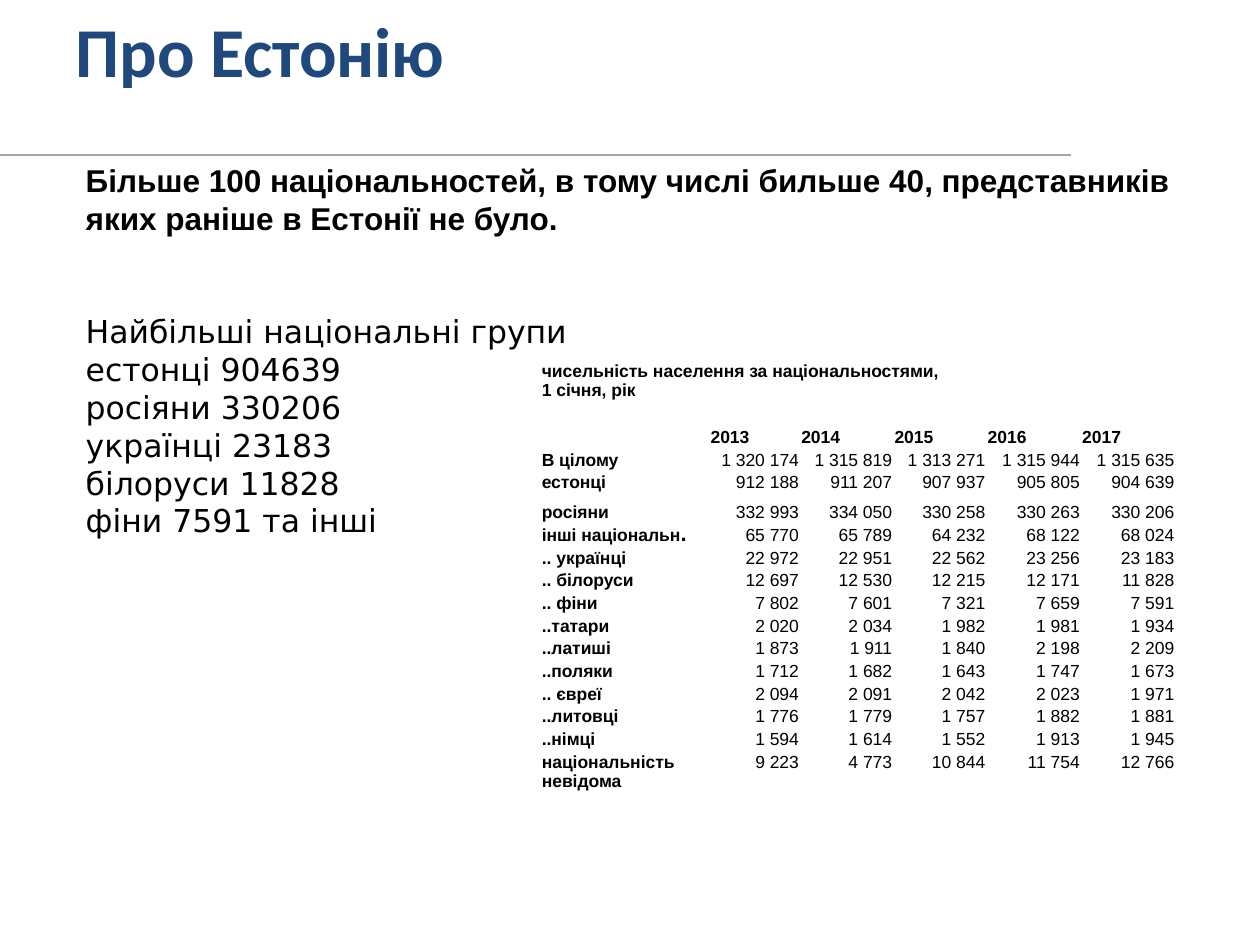
import pptx
import pptx.dml.color
import pptx.enum.shapes
import pptx.enum.text
import pptx.oxml.ns
import pptx.util
from lxml import etree

Inches, Pt = pptx.util.Inches, pptx.util.Pt
ALIGN = pptx.enum.text.PP_ALIGN
TOP = pptx.enum.text.MSO_ANCHOR.TOP
qn = pptx.oxml.ns.qn

THEME = {
    "title": "1F497D", "text": "000000", "rule": "A6A6A6",
    "title_font": "Calibri", "font": "Arial", "list_font": "DejaVu Sans",
    "title_size": 40, "body_size": 18, "table_size": 10,
}


def write(p, text, size, font=THEME["font"], color=THEME["text"], bold=False,
          align=ALIGN.LEFT, line=None, before=0):
    """Append a formatted run to a paragraph."""
    p.alignment = align
    p.space_before = Pt(before)
    if line:
        p.line_spacing = Pt(line)
    r = p.add_run()
    r.text = text
    r.font.size = Pt(size)
    r.font.name = font
    r.font.bold = bold
    r.font.color.rgb = pptx.dml.color.RGBColor.from_string(color)


prs = pptx.Presentation()
prs.slide_width, prs.slide_height = Inches(10), Inches(7.5)
s = prs.slides.add_slide(prs.slide_layouts[1])

# Rule under the title
rule = s.shapes.add_connector(pptx.enum.shapes.MSO_CONNECTOR.STRAIGHT,
                              Inches(-0.2), Inches(1.23), Inches(8.5), Inches(1.23))
rule.line.color.rgb = pptx.dml.color.RGBColor.from_string(THEME["rule"])
rule.line.width = Pt(1)
etree.SubElement(rule._element.spPr, qn("a:effectLst"))

# Title
title = s.shapes.title
title.left, title.top = Inches(0.5), Inches(0.3)
title.width, title.height = Inches(6.67), Inches(1.09)
tf = title.text_frame
tf.auto_size = pptx.enum.text.MSO_AUTO_SIZE.NONE
tf.vertical_anchor = TOP
write(tf.paragraphs[0], "Про Естонію", THEME["title_size"], font=THEME["title_font"],
      color=THEME["title"], bold=True, line=27)

# Statement and list of the largest groups
body = s.placeholders[1]
body.left, body.top = Inches(0.58), Inches(1.23)
body.width, body.height = Inches(9.22), Inches(3.74)
tf = body.text_frame
tf.word_wrap = True
tf.auto_size = pptx.enum.text.MSO_AUTO_SIZE.SHAPE_TO_FIT_TEXT
LINE = 21.6
statement = ("Більше 100 національностей, в тому числi бильше 40, "
             "представників яких раніше в Естонії не було.")
groups = ["Найбільші національні групи", "естонці 904639", "росіяни 330206",
          "українці 23183", "білоруси 11828", "фіни 7591 та інші"]
for i, text in enumerate([statement] + groups):
    p = tf.paragraphs[0] if i == 0 else tf.add_paragraph()
    pPr = p._p.get_or_add_pPr()
    pPr.set("marL", "0")
    pPr.set("indent", "0")
    etree.SubElement(pPr, qn("a:buNone"))
    write(p, text, THEME["body_size"], bold=i == 0, line=LINE,
          font=THEME["font"] if i == 0 else THEME["list_font"],
          before=2 * LINE if i == 1 else 0)

# Population by nationality
caption = ["чисельність населення за національностями,", "1 січня, рік"]
years = ["2013", "2014", "2015", "2016", "2017"]
population = [
    ("В цілому", "1 320 174", "1 315 819", "1 313 271", "1 315 944", "1 315 635"),
    ("естонці", "912 188", "911 207", "907 937", "905 805", "904 639"),
    ("росіяни", "332 993", "334 050", "330 258", "330 263", "330 206"),
    ("інші національн.", "65 770", "65 789", "64 232", "68 122", "68 024"),
    (".. українці", "22 972", "22 951", "22 562", "23 256", "23 183"),
    (".. білоруси", "12 697", "12 530", "12 215", "12 171", "11 828"),
    (".. фіни", "7 802", "7 601", "7 321", "7 659", "7 591"),
    ("..татари", "2 020", "2 034", "1 982", "1 981", "1 934"),
    ("..латишi", "1 873", "1 911", "1 840", "2 198", "2 209"),
    ("..поляки", "1 712", "1 682", "1 643", "1 747", "1 673"),
    (".. євреї", "2 094", "2 091", "2 042", "2 023", "1 971"),
    ("..литовцi", "1 776", "1 779", "1 757", "1 882", "1 881"),
    ("..нiмцi", "1 594", "1 614", "1 552", "1 913", "1 945"),
    ("національність невідома", "9 223", "4 773", "10 844", "11 754", "12 766"),
]
blank = [""] * 6
rows = [blank, blank, [""] + years] + population + [blank]
widths = [1.34, 0.72, 0.74, 0.74, 0.75, 0.75]
frame = s.shapes.add_table(len(rows), len(widths), Inches(4.29), Inches(2.86),
                           Inches(5.04), Inches(3.75))
table = frame.table
table.first_row = table.horz_banding = False
for column, width in zip(table.columns, widths):
    column.width = Inches(width)

size = THEME["table_size"]
for i, values in enumerate(rows):
    table.rows[i].height = Inches(0.24 if values[0] == "естонці" else 0.18)
    for j, text in enumerate(values):
        cell = table.cell(i, j)
        cell.fill.background()
        cell.vertical_anchor = TOP
        cell.margin_left = cell.margin_right = cell.margin_top = Inches(0.01)
        cell.margin_bottom = 0
        p = cell.text_frame.paragraphs[0]
        number = i > 2 and j > 0
        if not text:
            etree.SubElement(p._p, qn("a:endParaRPr"), sz=str(size * 100))
        elif text.endswith("."):
            write(p, text[:-1], size, bold=True)
            write(p, ".", size, font=THEME["list_font"], bold=True)
        else:
            write(p, text, size, bold=not number,
                  align=ALIGN.RIGHT if number else ALIGN.LEFT)

# Caption across the first four columns
table.cell(0, 0).merge(table.cell(0, 3))
tf = table.cell(0, 0).text_frame
for p, text in zip([tf.paragraphs[0], tf.add_paragraph()], caption):
    for end in p._p.findall(qn("a:endParaRPr")):
        p._p.remove(end)
    write(p, text, size, bold=True)

prs.save("out.pptx")
